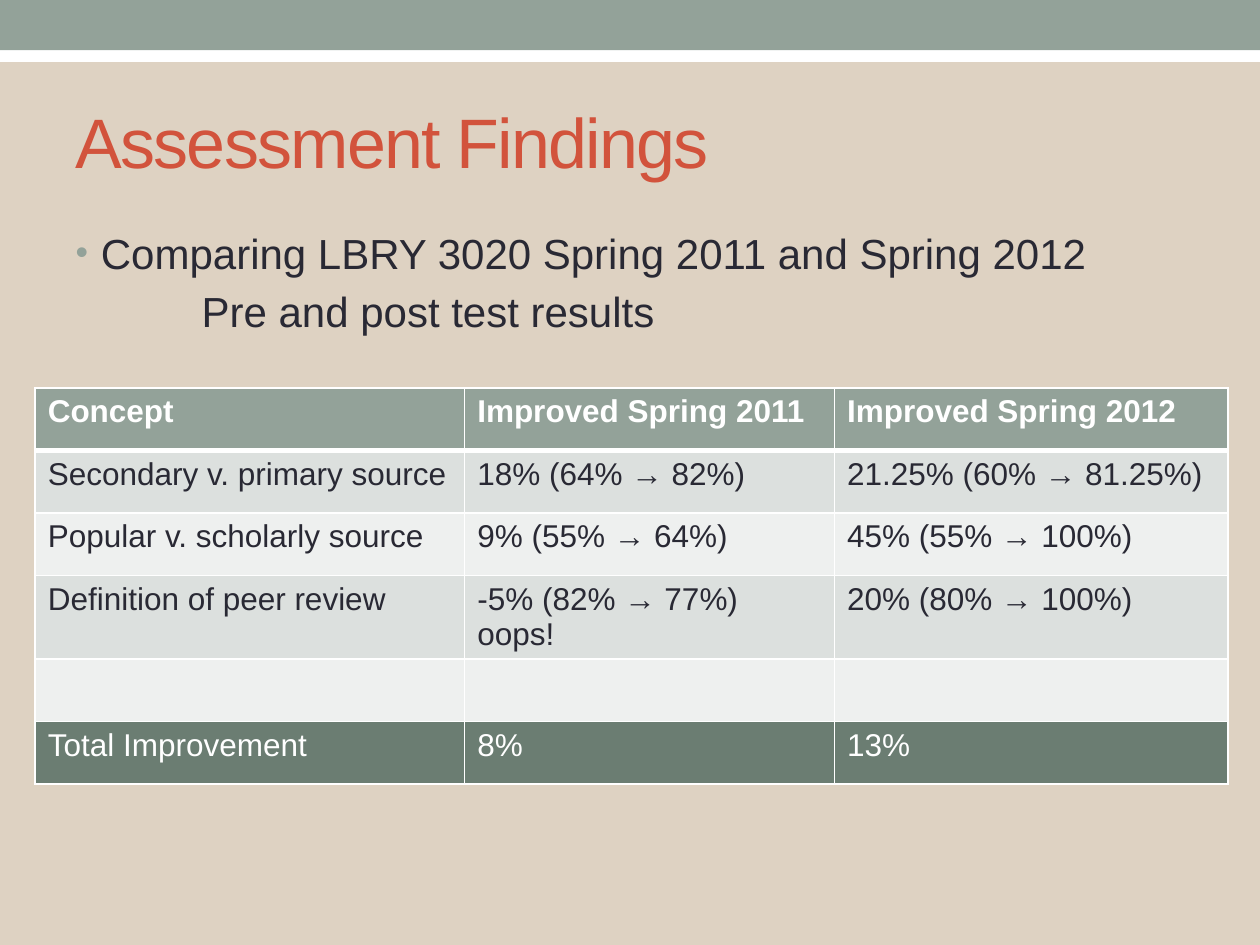
from lxml import etree
from pptx import Presentation
from pptx.dml.color import RGBColor
from pptx.enum.shapes import MSO_SHAPE
from pptx.enum.text import MSO_ANCHOR, MSO_AUTO_SIZE, PP_ALIGN
from pptx.oxml.ns import qn
from pptx.util import Cm, Pt

RECTANGLE = MSO_SHAPE.RECTANGLE
LEFT = PP_ALIGN.LEFT
TOP, MIDDLE = MSO_ANCHOR.TOP, MSO_ANCHOR.MIDDLE
NO_FIT = MSO_AUTO_SIZE.NONE

FONT = "Arial"
COLORS = {
    "background": "DED2C2",
    "sage": "93A299",
    "title": "D2533C",
    "ink": "292934",
    "white": "FFFFFF",
    "band_dark": "DCE0DE",
    "band_light": "EEF0EF",
    "total": "6B7D72",
}
FINDINGS = [
    ("Concept", "Improved Spring 2011", "Improved Spring 2012"),
    ("Secondary v. primary source", "18% (64% → 82%)", "21.25% (60% → 81.25%)"),
    ("Popular v. scholarly source", "9% (55% → 64%)", "45% (55% → 100%)"),
    ("Definition of peer review", "-5% (82% → 77%) oops!", "20% (80% → 100%)"),
    ("", "", ""),
    ("Total Improvement", "8%", "13%"),
]
COLUMN_SHARES = (0.36, 0.31, 0.33)


def rgb(name):
    return RGBColor.from_string(COLORS[name])


def write(paragraph, text, size=18, color="ink", bold=False, spacing=None):
    paragraph.alignment = LEFT
    run = paragraph.add_run()
    run.text = text
    font = run.font
    font.name, font.size, font.bold = FONT, Pt(size), bold
    font.color.rgb = rgb(color)
    if spacing is not None:
        font._element.set("spc", str(round(spacing * 100)))


def indent(paragraph, margin, first_line=0, bullet=None):
    properties = paragraph._p.get_or_add_pPr()
    properties.set("marL", str(margin))
    properties.set("indent", str(first_line))
    if bullet is None:
        etree.SubElement(properties, qn("a:buNone"))
        return
    bullet_color = etree.SubElement(properties, qn("a:buClr"))
    etree.SubElement(bullet_color, qn("a:srgbClr"), val=COLORS["sage"])
    etree.SubElement(properties, qn("a:buSzPct"), val="85000")
    etree.SubElement(properties, qn("a:buFont"), typeface=FONT)
    etree.SubElement(properties, qn("a:buChar"), char=bullet)


def place(shape, left, top, width, height):
    shape.left, shape.top, shape.width, shape.height = left, top, width, height


def add_band(slide, left, top, width, height, color):
    band = slide.shapes.add_shape(RECTANGLE, left, top, width, height)
    band.shadow.inherit = False
    band.fill.solid()
    band.fill.fore_color.rgb = rgb(color)
    band.line.fill.background()


def add_header(slide, left, top, width, height):
    sage_height = int(height * 0.81)
    add_band(slide, left, top + sage_height, width, height - sage_height, "white")
    add_band(slide, left, top, width, sage_height, "sage")


def fill_title(slide, *box):
    title = slide.shapes.title
    place(title, *box)
    frame = title.text_frame
    frame.vertical_anchor, frame.auto_size = MIDDLE, NO_FIT
    write(frame.paragraphs[0], "Assessment Findings", size=40, color="title", spacing=-1)


def fill_body(slide, *box):
    body = slide.placeholders[1]
    place(body, *box)
    frame = body.text_frame
    frame.vertical_anchor, frame.auto_size = TOP, NO_FIT
    comparison, results = frame.paragraphs[0], frame.add_paragraph()
    write(comparison, "Comparing LBRY 3020 Spring 2011 and Spring 2012", size=24)
    indent(comparison, Cm(0.51), Cm(-0.51), bullet="•")
    write(results, "Pre and post test results", size=24)
    indent(results, Cm(2.54))


def border_cell(cell, bottom=1, top=1):
    properties = cell._tc.get_or_add_tcPr()
    widths = {"a:lnL": 1, "a:lnR": 1, "a:lnT": top, "a:lnB": bottom}
    for position, (side, width) in enumerate(widths.items()):
        line = etree.Element(qn(side), w=str(Pt(width)))
        fill = etree.SubElement(line, qn("a:solidFill"))
        etree.SubElement(fill, qn("a:srgbClr"), val=COLORS["white"])
        properties.insert(position, line)


def row_style(row):
    """Return the fill and text colours of a table row."""
    if row == 0:
        return "sage", "white"
    if row == len(FINDINGS) - 1:
        return "total", "white"
    return ("band_dark" if row % 2 else "band_light"), "ink"


def add_findings(slide, left, top, width, height):
    frame = slide.shapes.add_table(
        len(FINDINGS), len(COLUMN_SHARES), left, top, width, height
    )
    table = frame.table
    for column, share in zip(table.columns, COLUMN_SHARES):
        column.width = int(width * share)
    for row, values in enumerate(FINDINGS):
        fill, color = row_style(row)
        for column, value in enumerate(values):
            cell = table.cell(row, column)
            cell.fill.solid()
            cell.fill.fore_color.rgb = rgb(fill)
            border_cell(cell, bottom=3 if row == 0 else 1, top=3 if row == 1 else 1)
            if value:
                write(cell.text_frame.paragraphs[0], value, color=color, bold=row == 0)


def main():
    deck = Presentation()
    deck.slide_width, deck.slide_height = Cm(25.4), Cm(19.05)
    slide = deck.slides.add_slide(deck.slide_layouts[1])
    slide.background.fill.solid()
    slide.background.fill.fore_color.rgb = rgb("background")

    add_header(slide, 0, 0, deck.slide_width, Cm(1.25))
    fill_title(slide, Cm(1.27), Cm(1.47), Cm(22.86), Cm(2.74))
    fill_body(slide, Cm(1.27), Cm(4.45), Cm(22.86), Cm(4.34))
    add_findings(slide, Cm(0.71), Cm(7.82), Cm(24.05), Cm(7.57))
    deck.save("out.pptx")


if __name__ == "__main__":
    main()
